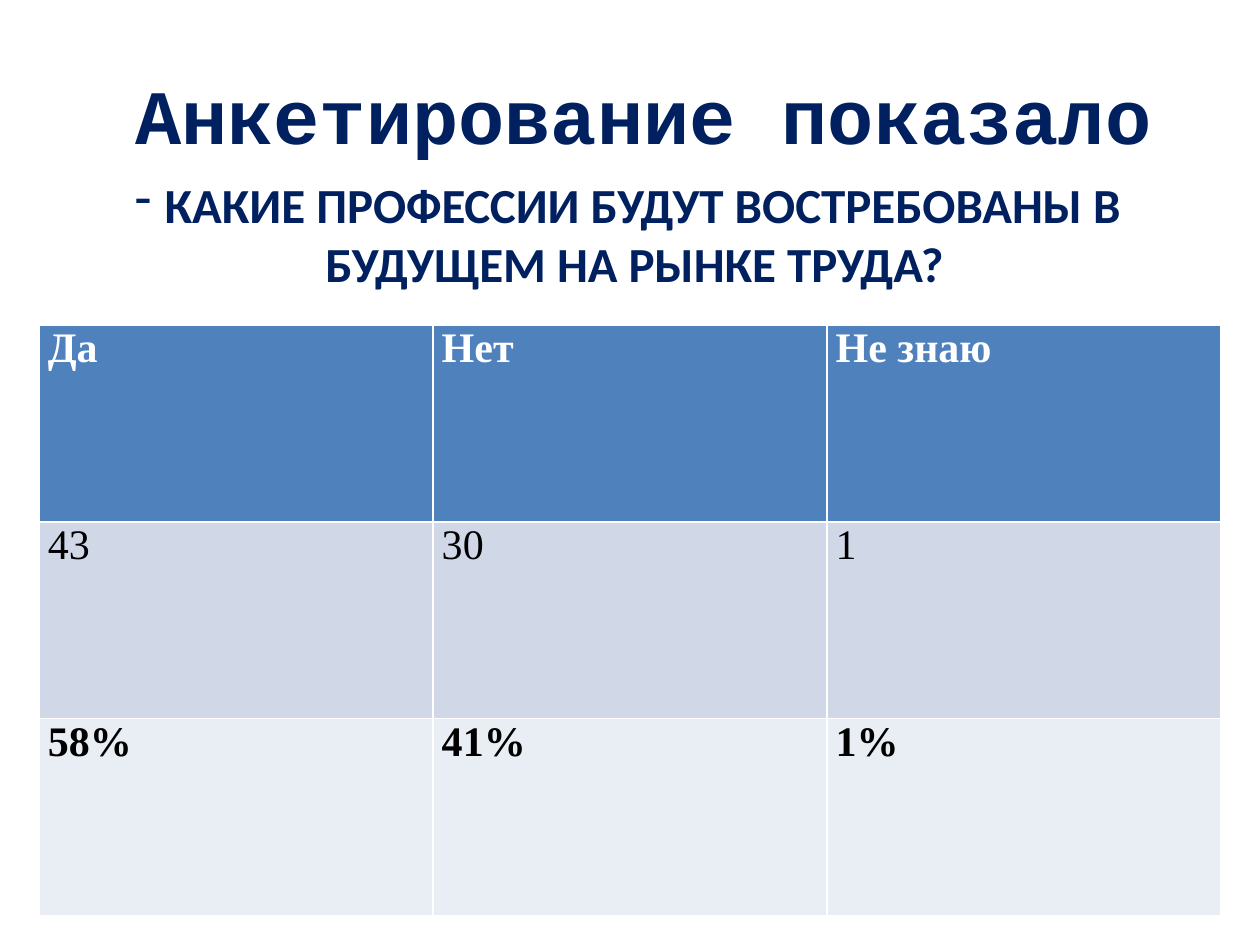
from lxml import etree
from pptx import Presentation, util as u
from pptx.dml.color import RGBColor
from pptx.enum import text
from pptx.oxml.ns import qn

WIDTH, HEIGHT = u.Inches(10), u.Inches(7.5)
NAVY, WHITE, BLACK = "002060", "FFFFFF", "000000"
ANSWERS = [
    (("Да", "Нет", "Не знаю"), "4F81BD", WHITE, True),
    (("43", "30", "1"), "D0D8E8", BLACK, False),
    (("58%", "41%", "1%"), "E9EDF4", BLACK, True),
]


def color(code):
    """Turn a hex string into a colour."""
    return RGBColor.from_string(code)


def box(left, top, width, height):
    """Turn shares of the slide's size into lengths."""
    return [int(share * side) for share, side in
            zip((left, top, width, height), (WIDTH, HEIGHT) * 2)]


def style(paragraph, family, size, code, bold):
    """Format every run of a paragraph."""
    for run in paragraph.runs:
        run.font.name, run.font.size, run.font.bold = family, u.Pt(size), bold
        run.font.color.rgb = color(code)


def add_heading(slide, area, wording, family, size, anchor):
    """Place a centred bold navy line and return its paragraph."""
    frame = slide.shapes.add_textbox(*area).text_frame
    frame.word_wrap = True
    frame.vertical_anchor = anchor
    frame.text = wording
    paragraph = frame.paragraphs[0]
    paragraph.alignment = text.PP_ALIGN.CENTER
    style(paragraph, family, size, NAVY, True)
    return paragraph


def add_question(slide, area):
    """Place the survey question with its dash bullet."""
    question = add_heading(
        slide, area, "КАКИЕ ПРОФЕССИИ БУДУТ ВОСТРЕБОВАНЫ В БУДУЩЕМ НА РЫНКЕ ТРУДА?",
        "Calibri", 28, text.MSO_ANCHOR.TOP)
    bullet = etree.SubElement(question._p.get_or_add_pPr(), qn("a:buChar"))
    bullet.set("char", "-")


def add_answers(slide, area):
    """Place the table of answers in equal columns and rows."""
    answers = slide.shapes.add_table(len(ANSWERS), len(ANSWERS[0][0]), *area).table
    for row, (values, fill, ink, bold) in enumerate(ANSWERS):
        for column, value in enumerate(values):
            cell = answers.cell(row, column)
            cell.margin_left = cell.margin_right = u.Inches(0.07)
            cell.margin_top = cell.margin_bottom = 0
            cell.fill.solid()
            cell.fill.fore_color.rgb = color(fill)
            cell.text = value
            style(cell.text_frame.paragraphs[0], "Times New Roman", 24, ink, bold)


def main():
    """Build the survey slide and save it."""
    deck = Presentation()
    deck.slide_width, deck.slide_height = WIDTH, HEIGHT
    slide = deck.slides.add_slide(deck.slide_layouts[6])
    add_heading(slide, box(0.086, 0.03, 0.85, 0.18), "Анкетирование показало",
                "Courier New", 44, text.MSO_ANCHOR.MIDDLE)
    add_question(slide, box(0.031, 0.178, 0.945, 0.792))
    add_answers(slide, box(0.031, 0.344, 0.938, 0.625))
    deck.save("out.pptx")


if __name__ == "__main__":
    main()
